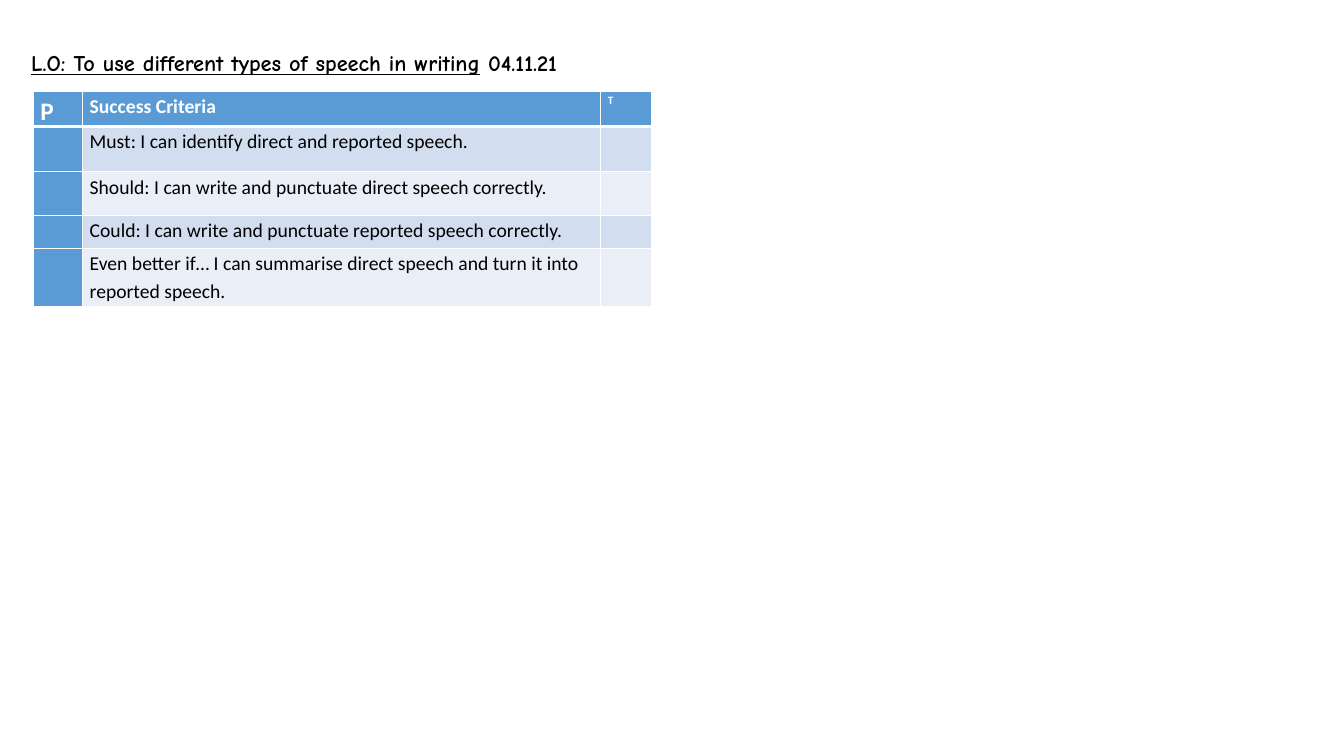
from lxml.etree import SubElement
from pptx import Presentation
from pptx.dml.color import RGBColor
from pptx.enum.text import MSO_ANCHOR, MSO_AUTO_SIZE, PP_ALIGN
from pptx.oxml.ns import qn
from pptx.util import Inches, Pt

WHITE = RGBColor(0xFF, 0xFF, 0xFF)
BLACK = RGBColor(0, 0, 0)
BLUE = RGBColor(0x5B, 0x9B, 0xD5)
BANDS = (RGBColor(0xD2, 0xDE, 0xEF), RGBColor(0xEA, 0xEF, 0xF7))

TITLE = "L.O: To use different types of speech in writing"
DATE = " 04.11.21"
HEADS = (("P", 18), ("Success Criteria", 14), ("T", 8))
# Wording and the space before and after it, in points
GOALS = (
    ("Must: I can identify direct and reported speech.", 2),
    ("Should: I can write and punctuate direct speech correctly.", 2),
    ("Could: I can write and punctuate reported speech correctly.", 0),
    ("Even better if… I can summarise direct speech and turn it into reported speech.", 0),
)
COLS = (0.49, 5.14, 0.5)
ROWS = (0.32, 0.45, 0.43, 0.33, 0.58)


def write(para, text, size=14, font="Calibri", color=BLACK, bold=False,
          under=False, line=None, gap=0):
    run = para.add_run()
    run.text = text
    run.font.size = Pt(size)
    run.font.name = font
    run.font.color.rgb = color
    run.font.bold = bold
    run.font.underline = under
    para.alignment = PP_ALIGN.LEFT
    para.space_before = para.space_after = Pt(gap)
    if line:
        para.line_spacing = line


def dress(cell, fill, base):
    """Set a cell's margins, white borders and fill."""
    cell.margin_left = cell.margin_right = Inches(0.07)
    cell.margin_top = cell.margin_bottom = 0
    props = cell._tc.get_or_add_tcPr()
    for side, width in (("L", 1), ("R", 1), ("T", 1), ("B", base)):
        edge = SubElement(props, qn(f"a:ln{side}"), w=str(Pt(width)))
        paint = SubElement(edge, qn("a:solidFill"))
        SubElement(paint, qn("a:srgbClr"), val=str(WHITE))
    cell.fill.solid()
    cell.fill.fore_color.rgb = fill


def add_title(slide):
    title = slide.shapes.title
    title.left, title.top = Inches(0.21), Inches(0.44)
    title.width, title.height = Inches(6.69), Inches(0.37)
    frame = title.text_frame
    frame.word_wrap = True
    frame.auto_size = MSO_AUTO_SIZE.SHAPE_TO_FIT_TEXT
    frame.vertical_anchor = MSO_ANCHOR.MIDDLE
    para = frame.paragraphs[0]
    for text, under in ((TITLE, True), (DATE, False)):
        write(para, text, size=16, font="Comic Neue", bold=True, under=under)


def add_goals(slide):
    table = slide.shapes.add_table(
        len(ROWS), len(COLS), Inches(0.33), Inches(0.91),
        Inches(sum(COLS)), Inches(sum(ROWS))).table
    for col, width in zip(table.columns, COLS):
        col.width = Inches(width)
    for row, height in zip(table.rows, ROWS):
        row.height = Inches(height)
    for r in range(len(ROWS)):
        for c in range(len(COLS)):
            fill = BLUE if r == 0 or c == 0 else BANDS[(r - 1) % 2]
            dress(table.cell(r, c), fill, base=3 if r == 0 else 1)
    for c, (text, size) in enumerate(HEADS):
        write(table.cell(0, c).text_frame.paragraphs[0], text, size=size,
              color=WHITE, bold=True, line=1.15)
    for r, (text, gap) in enumerate(GOALS, 1):
        write(table.cell(r, 1).text_frame.paragraphs[0], text, line=1.15, gap=gap)


def main():
    deck = Presentation()
    deck.slide_width, deck.slide_height = Inches(13.33), Inches(7.5)
    slide = deck.slides.add_slide(deck.slide_layouts[0])
    sub = slide.placeholders[1].element
    sub.getparent().remove(sub)
    add_goals(slide)
    add_title(slide)
    deck.save("out.pptx")


if __name__ == "__main__":
    main()
